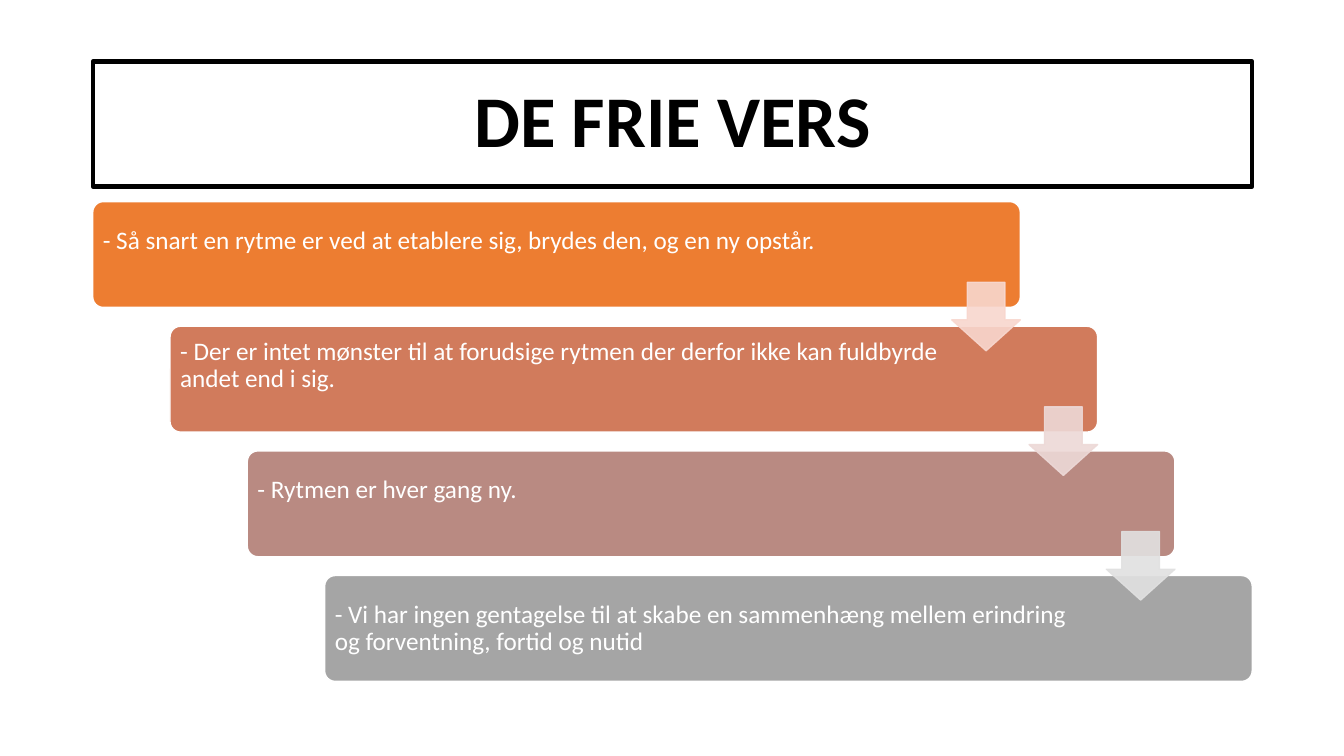
"""Build the slide on free verse as a descending staircase of four steps."""
from lxml import etree
from pptx import Presentation
from pptx.dml.color import RGBColor
from pptx.enum import shapes, text
from pptx.oxml import ns
from pptx.util import Inches, Pt

BLACK = RGBColor(0x00, 0x00, 0x00)
WHITE = RGBColor(0xFF, 0xFF, 0xFF)
ORANGE = RGBColor(0xED, 0x7D, 0x31)
TERRACOTTA = RGBColor(0xD1, 0x7B, 0x5C)
ROSE = RGBColor(0xB9, 0x8A, 0x82)
GRAY = RGBColor(0xA5, 0xA5, 0xA5)
PALE_ORANGE = RGBColor(0xF8, 0xD7, 0xCE)
PALE_ROSE = RGBColor(0xED, 0xD9, 0xD7)
PALE_GRAY = RGBColor(0xE1, 0xE1, 0xE1)

HEADING = "DE FRIE VERS"
STEPS = [
    ("- Så snart en rytme er ved at etablere sig, brydes den, og en ny opstår.", ORANGE, 7.98, 0.34),
    ("- Der er intet mønster til at forudsige rytmen der derfor ikke kan fuldbyrde andet end i sig.",
     TERRACOTTA, 7.69, 0.34),
    ("- Rytmen er hver gang ny.", ROSE, 7.69, 0.34),
    ("- Vi har ingen gentagelse til at skabe en sammenhæng mellem erindring og forventning, fortid og nutid",
     GRAY, 7.69, 0.07),
]
ARROW_COLORS = [PALE_ORANGE, PALE_ROSE, PALE_GRAY]

LEFT, TOP = 0.92, 2
STEP_X, STEP_Y = 2.3 / 3, 3.71 / 3
STEP_WIDTH, STEP_HEIGHT = 9.2, 1.05
PAD, INSET = 0.03, 0.07
ARROW_LEFT, ARROW_TOP, ARROW_SIZE = 9.44, 2.8, 0.68


def write(frame, words, size, color, bold=False, align=text.PP_ALIGN.LEFT):
    frame.word_wrap = True
    frame.vertical_anchor = text.MSO_ANCHOR.MIDDLE
    frame.text = words
    paragraph = frame.paragraphs[0]
    paragraph.alignment = align
    paragraph.line_spacing = 0.9
    font = paragraph.runs[0].font
    font.name, font.size, font.bold = "Calibri", Pt(size), bold
    font.color.rgb = color


def add_block(slide, preset, box, adjustments, fill, line, opacity=100):
    block = slide.shapes.add_shape(preset, *map(Inches, box))
    block.shadow.inherit = False
    for index, value in enumerate(adjustments):
        block.adjustments[index] = value
    block.fill.solid()
    block.fill.fore_color.rgb = fill
    block.line.color.rgb = line
    block.line.width = Pt(1)
    if opacity < 100:
        for color in block.element.spPr.iter(ns.qn("a:srgbClr")):
            etree.SubElement(color, ns.qn("a:alpha")).set("val", str(opacity * 1000))


def add_step(slide, index, words, fill, text_width, bottom_inset):
    left, top = LEFT + index * STEP_X, TOP + index * STEP_Y
    add_block(slide, shapes.MSO_SHAPE.ROUNDED_RECTANGLE,
              (left, top, STEP_WIDTH, STEP_HEIGHT), [0.1], fill, WHITE)
    statement = slide.shapes.add_textbox(
        Inches(left + PAD), Inches(top + PAD), Inches(text_width), Inches(STEP_HEIGHT - 2 * PAD))
    frame = statement.text_frame
    frame.margin_left = frame.margin_right = frame.margin_top = Inches(INSET)
    frame.margin_bottom = Inches(bottom_inset)
    write(frame, words, 18, WHITE)


def main():
    deck = Presentation()
    deck.slide_width, deck.slide_height = Inches(13.33), Inches(7.5)
    slide = deck.slides.add_slide(deck.slide_layouts[5])

    heading = slide.shapes.title
    heading.left, heading.top = Inches(LEFT), Inches(0.61)
    heading.width, heading.height = Inches(11.5), Inches(1.24)
    heading.line.color.rgb = BLACK
    heading.line.width = Pt(3)
    write(heading.text_frame, HEADING, 52, BLACK, bold=True, align=text.PP_ALIGN.CENTER)

    for index, step in enumerate(STEPS):
        add_step(slide, index, *step)
    for index, color in enumerate(ARROW_COLORS):
        box = (ARROW_LEFT + index * STEP_X, ARROW_TOP + index * STEP_Y, ARROW_SIZE, ARROW_SIZE)
        add_block(slide, shapes.MSO_SHAPE.DOWN_ARROW, box, [0.55, 0.45], color, color, opacity=90)

    deck.save("out.pptx")


if __name__ == "__main__":
    main()
